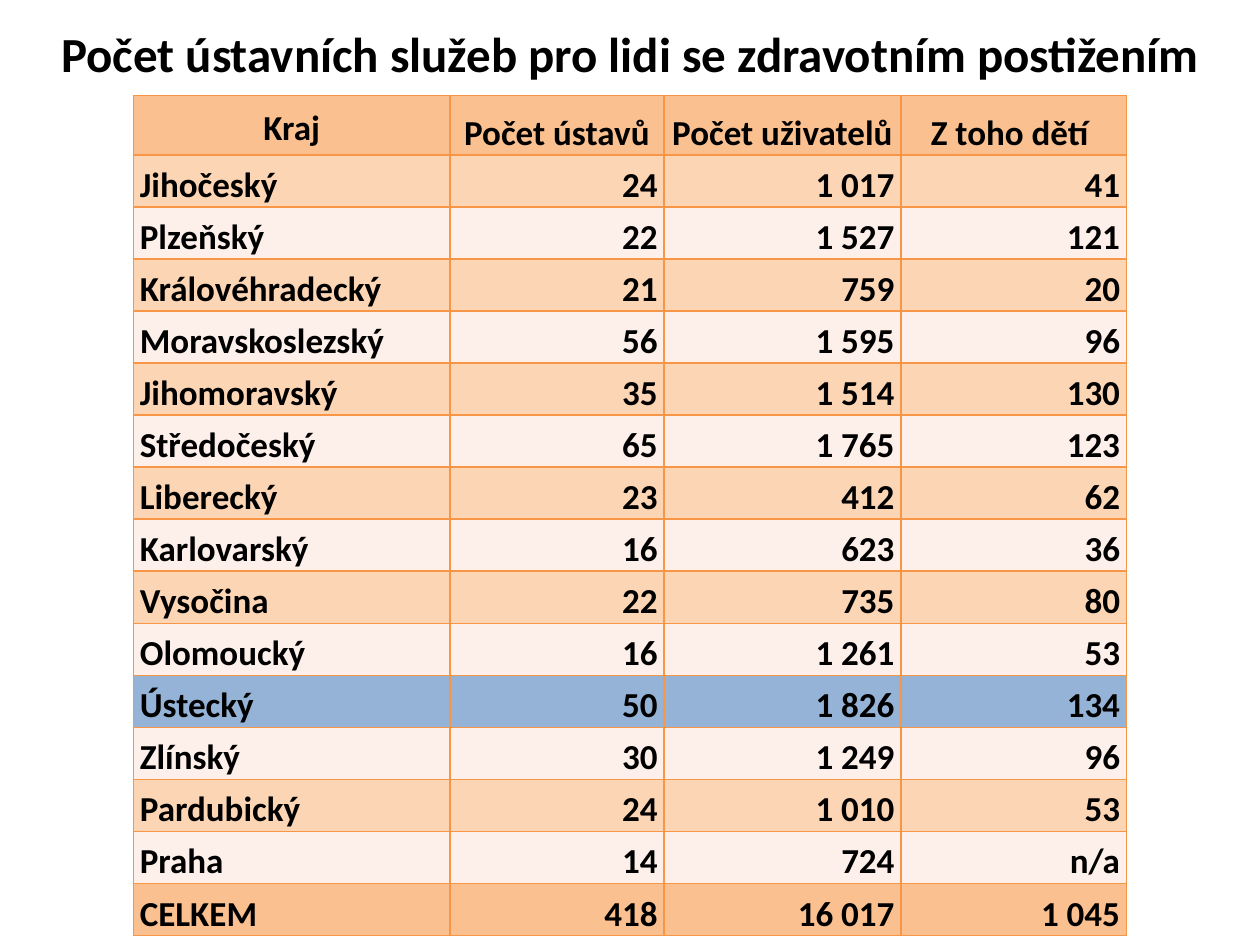
from lxml import etree
from pptx import Presentation
from pptx.dml.color import RGBColor
from pptx.enum.text import MSO_ANCHOR, PP_ALIGN
from pptx.oxml.ns import qn
from pptx.util import Inches, Pt

LEFT, CENTER, RIGHT = PP_ALIGN.LEFT, PP_ALIGN.CENTER, PP_ALIGN.RIGHT
MIDDLE, BOTTOM = MSO_ANCHOR.MIDDLE, MSO_ANCHOR.BOTTOM

# Content
TITLE = "Počet ústavních služeb pro lidi se zdravotním postižením"
HEADER = ("Kraj", "Počet ústavů", "Počet uživatelů", "Z toho dětí ")
REGIONS = [
    ("Jihočeský", "24", "1 017", "41"),
    ("Plzeňský", "22", "1 527", "121"),
    ("Královéhradecký", "21", "759", "20"),
    ("Moravskoslezský", "56", "1 595", "96"),
    ("Jihomoravský", "35", "1 514", "130"),
    ("Středočeský", "65", "1 765", "123"),
    ("Liberecký", "23", "412", "62"),
    ("Karlovarský", "16", "623", "36"),
    ("Vysočina", "22", "735", "80"),
    ("Olomoucký", "16", "1 261", "53"),
    ("Ústecký", "50", "1 826", "134"),
    ("Zlínský", "30", "1 249", "96"),
    ("Pardubický", "24", "1 010", "53"),
    ("Praha", "14", "724", "n/a"),
]
TOTAL = ("CELKEM", "418", "16 017", "1 045")
HIGHLIGHTED = "Ústecký"


class Theme:
    font = "Calibri"
    title_size, cell_size = 28, 20
    text, border = "000000", "F79646"
    strong, highlight = "FAC090", "95B3D7"
    bands = ("FCD5B5", "FDEFE9")
    border_width = 1
    line_spacing = 1.15


# Layout in inches
TABLE_LEFT, TABLE_TOP, TABLE_HEIGHT = 1.06, 0.76, 6.67
COLUMN_WIDTHS = (2.51, 1.7, 1.88, 1.79)
HEADER_HEIGHT = 0.47
CELL_INSET = 0.05


def write(para, text, size, align):
    para.alignment = align
    span = para.add_run()
    span.text = text
    span.font.name = Theme.font
    span.font.size = Pt(size)
    span.font.bold = True
    span.font.color.rgb = RGBColor.from_string(Theme.text)


def add_borders(cell):
    properties = cell._tc.get_or_add_tcPr()
    for position, side in enumerate(("a:lnL", "a:lnR", "a:lnT", "a:lnB")):
        line = etree.Element(qn(side), w=str(Pt(Theme.border_width)))
        fill = etree.SubElement(line, qn("a:solidFill"))
        etree.SubElement(fill, qn("a:srgbClr"), val=Theme.border)
        properties.insert(position, line)


def row_fill(index, region):
    if region in (HEADER[0], TOTAL[0]):
        return Theme.strong
    if region == HIGHLIGHTED:
        return Theme.highlight
    return Theme.bands[(index - 1) % 2]


def add_title(page):
    box = page.shapes.add_textbox(0, 0, Inches(10), Inches(0.84))
    frame = box.text_frame
    frame.word_wrap = True
    frame.vertical_anchor = MIDDLE
    write(frame.paragraphs[0], TITLE, Theme.title_size, CENTER)


def add_region_table(page):
    rows = [HEADER, *REGIONS, TOTAL]
    table = page.shapes.add_table(
        len(rows), len(HEADER), Inches(TABLE_LEFT), Inches(TABLE_TOP),
        Inches(sum(COLUMN_WIDTHS)), Inches(TABLE_HEIGHT)).table

    # Grid: a taller header, the rest shared equally
    for column, width in zip(table.columns, COLUMN_WIDTHS):
        column.width = Inches(width)
    body_height = (TABLE_HEIGHT - HEADER_HEIGHT) / (len(rows) - 1)
    for index, row in enumerate(table.rows):
        row.height = Inches(body_height if index else HEADER_HEIGHT)

    # Cells
    for r, values in enumerate(rows):
        fill = RGBColor.from_string(row_fill(r, values[0]))
        for c, text in enumerate(values):
            cell = table.cell(r, c)
            cell.fill.solid()
            cell.fill.fore_color.rgb = fill
            cell.margin_left = cell.margin_right = Inches(CELL_INSET)
            cell.margin_top = cell.margin_bottom = 0
            cell.vertical_anchor = MIDDLE if r == c == 0 else BOTTOM
            para = cell.text_frame.paragraphs[0]
            para.line_spacing = Theme.line_spacing
            align = CENTER if r == 0 else LEFT if c == 0 else RIGHT
            write(para, text, Theme.cell_size, align)
            add_borders(cell)


def main():
    deck = Presentation()
    deck.slide_width, deck.slide_height = Inches(10), Inches(7.5)
    page = deck.slides.add_slide(deck.slide_layouts[6])
    add_title(page)
    add_region_table(page)
    deck.save("out.pptx")


if __name__ == "__main__":
    main()
